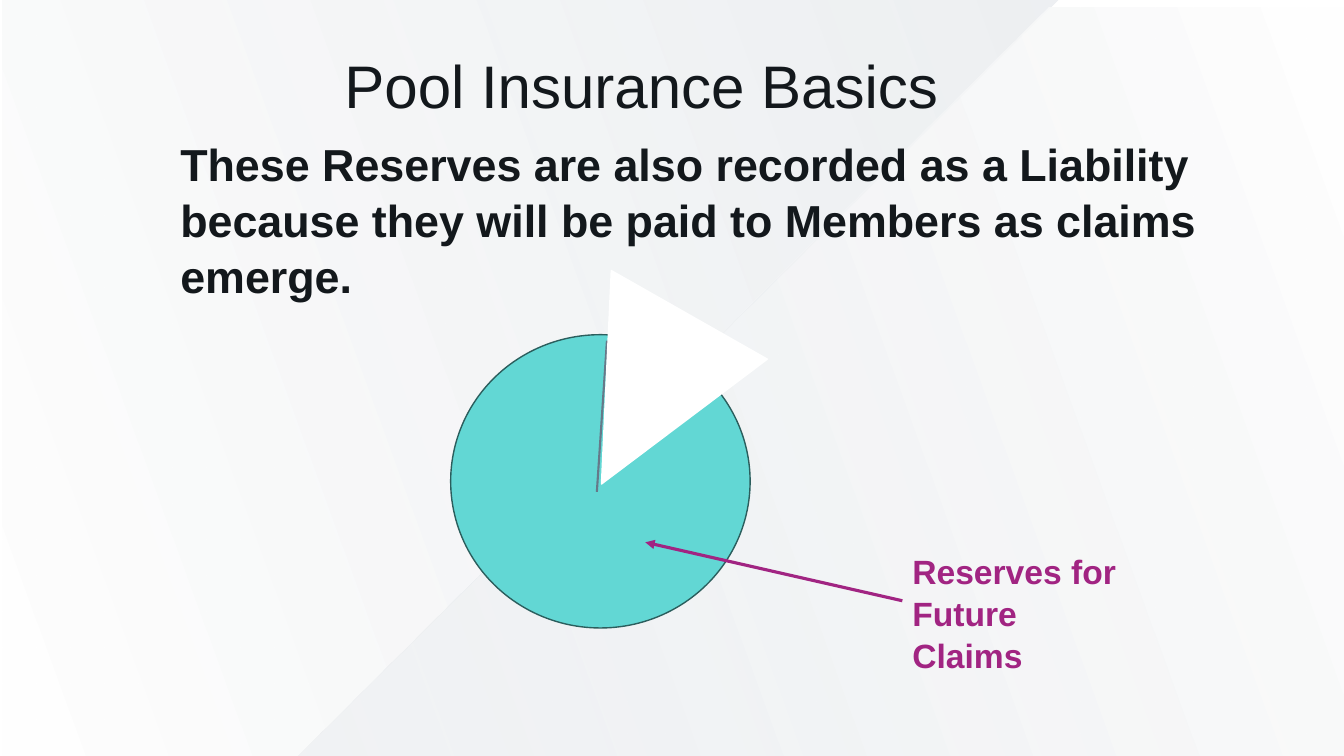
from lxml.etree import SubElement
from pptx import Presentation
from pptx.dml.color import RGBColor
from pptx.enum.shapes import MSO_CONNECTOR, MSO_SHAPE
from pptx.enum.text import MSO_ANCHOR, PP_ALIGN
from pptx.oxml.ns import qn
from pptx.util import Inches, Pt

# Content: text, box, size, bold, colour, alignment, line spacing, top inset
INK, PURPLE = "13181C", "A12482"
TEXTS = [
    ("Pool Insurance Basics", (1.49, 0.47, 9.74, 0.89),
     42.9, False, INK, PP_ALIGN.CENTER, 0.9, 0.09),
    ("These Reserves are also recorded as a Liability because they will be "
     "paid to Members as claims emerge.", (1.69, 1.26, 10.7, 1.65),
     32, True, INK, PP_ALIGN.LEFT, 1.04, 0.08),
    ("Reserves for Future Claims", (8.95, 5.4, 2.22, 1.31),
     24, True, PURPLE, PP_ALIGN.LEFT, 1.04, 0.05),
]
# Background panels: outline, gradient angle, opacity percent at each end
PANELS = [
    ([(0.03, 0), (10.5, 0), (2.96, 7.5), (0.03, 7.5)], 200, (54, 80)),
    ([(10.4, 0.08), (13.33, 0.08), (13.33, 7.58), (2.86, 7.58)], 20, (43, 100)),
]
PANEL_COLORS = ("E0E4E8", "FFFFFF")
PIE = (4.47, 3.32, 2.97, 2.91)
WEDGE = (5.48, 3, 1.78, 1.89)


def color(hex_code):
    return RGBColor.from_string(hex_code)


def add_panel(slide, points, angle, opacities):
    corners = [(Inches(x), Inches(y)) for x, y in points]
    builder = slide.shapes.build_freeform(*corners[0])
    builder.add_line_segments(corners[1:], close=True)
    panel = builder.convert_to_shape()
    panel.shadow.inherit = False
    panel.line.fill.background()
    panel.fill.gradient()
    panel.fill.gradient_angle = angle
    for stop, shade in zip(panel.fill.gradient_stops, PANEL_COLORS):
        stop.color.rgb = color(shade)
    for tint, opacity in zip(panel._element.iter(qn("a:srgbClr")), opacities):
        SubElement(tint, qn("a:alpha"), val=str(opacity * 1000))


def add_figure(slide, kind, place, fill, outline):
    figure = slide.shapes.add_shape(kind, *map(Inches, place))
    figure.shadow.inherit = False
    figure.fill.solid()
    figure.fill.fore_color.rgb = color(fill)
    figure.line.color.rgb = color(outline)
    figure.line.width = Pt(1)
    return figure


def add_line(slide, ends, shade, width):
    line = slide.shapes.add_connector(MSO_CONNECTOR.STRAIGHT, *map(Inches, ends))
    line.line.color.rgb = color(shade)
    line.line.width = Pt(width)
    SubElement(line._element.spPr, qn("a:effectLst"))
    return line


def add_text(slide, text, place, size, bold, shade, align, spacing, inset):
    box = slide.shapes.add_textbox(*map(Inches, place))
    frame = box.text_frame
    frame.word_wrap = True
    frame.vertical_anchor = MSO_ANCHOR.TOP
    frame.margin_top = Inches(inset)
    para = frame.paragraphs[0]
    para.alignment = align
    para.line_spacing = spacing
    span = para.add_run()
    span.text = text
    span.font.name = "Arial"
    span.font.size = Pt(size)
    span.font.bold = bold
    span.font.color.rgb = color(shade)


def main():
    deck = Presentation()
    deck.slide_width, deck.slide_height = Inches(13.33), Inches(7.5)
    slide = deck.slides.add_slide(deck.slide_layouts[6])

    # Background
    for panel in PANELS:
        add_panel(slide, *panel)

    # Title, statement and label
    for item in TEXTS:
        add_text(slide, *item)

    # Pie with its edge and the arrow from the label
    add_figure(slide, MSO_SHAPE.OVAL, PIE, "62D7D4", "2B5E5D")
    add_line(slide, (6.02, 3.38, 5.92, 4.88), "667989", 1.5)
    arrow = add_line(slide, (6.4, 5.38, 8.95, 5.96), PURPLE, 2.25)
    SubElement(arrow.line._get_or_add_ln(), qn("a:headEnd"), type="triangle")

    # Removed slice
    wedge = add_figure(slide, MSO_SHAPE.ISOSCELES_TRIANGLE, WEDGE, "FFFFFF", "FFFFFF")
    wedge.adjustments[0] = 0.46
    wedge.rotation = 209.6

    deck.save("out.pptx")


if __name__ == "__main__":
    main()
